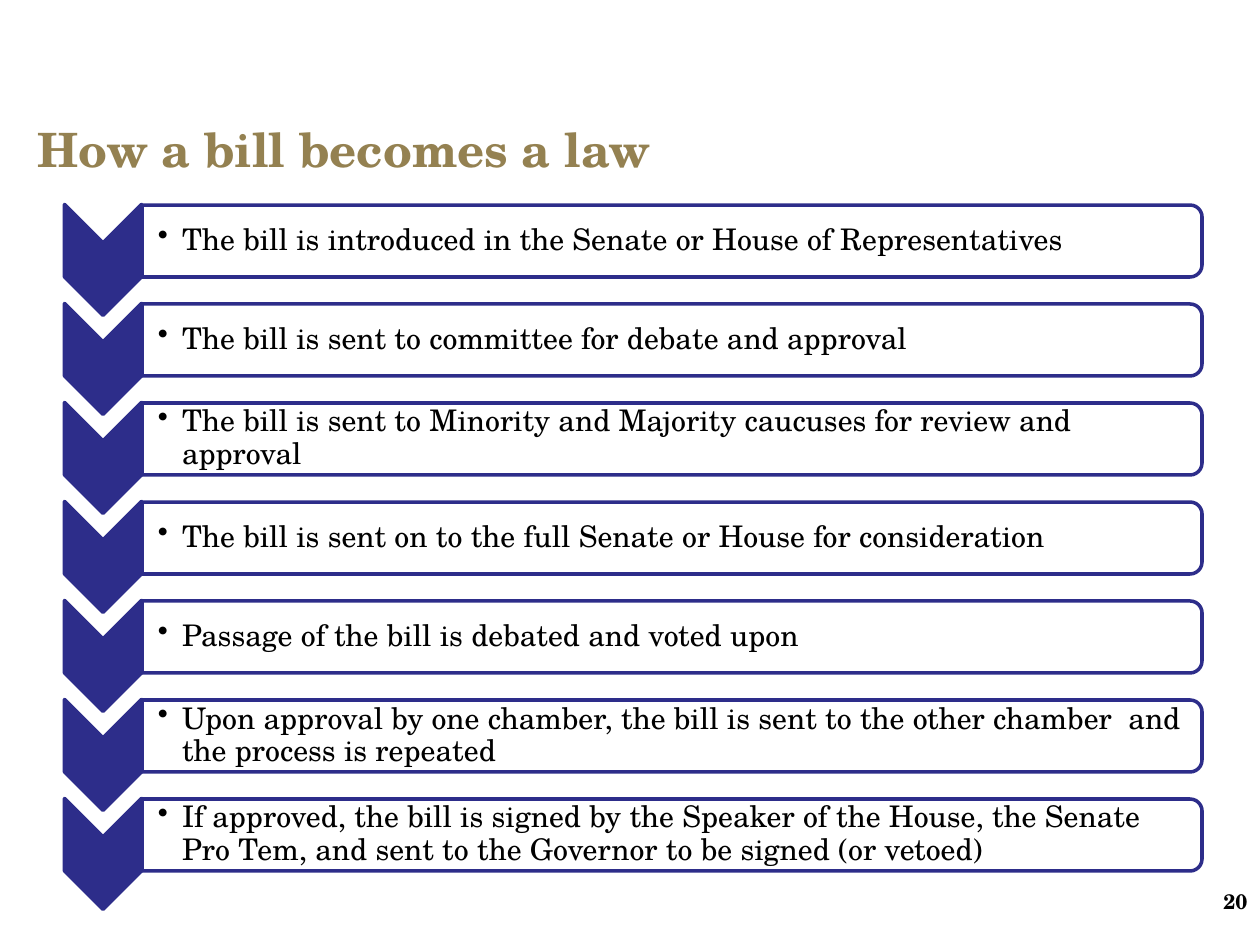
from lxml.etree import SubElement
from pptx import Presentation
from pptx.dml.color import RGBColor
from pptx.enum.shapes import MSO_SHAPE as SHAPE
from pptx.enum.text import MSO_ANCHOR as ANCHOR, MSO_AUTO_SIZE as AUTO, PP_ALIGN as ALIGN
from pptx.oxml.ns import qn
from pptx.util import Pt

PX = 914400 / 126
FONT = "TeX Gyre Schola"
COLORS = {"navy": "2D2D8A", "gold": "948151", "white": "FFFFFF", "black": "000000"}
STEPS = [
    "The bill is introduced in the Senate or House of Representatives",
    "The bill is sent to committee for debate and approval",
    "The bill is sent to Minority and Majority caucuses for review and approval",
    "The bill is sent on to the full Senate or House for consideration",
    "Passage of the bill is debated and voted upon",
    "Upon approval by one chamber, the bill is sent to the other chamber  and the process is repeated",
    "If approved, the bill is signed by the Speaker of the House, the Senate Pro Tem, "
    "and sent to the Governor to be signed (or vetoed)",
]
FIRST_TOP, PITCH = 205, 99
BAR_LEFT, BAR_LENGTH, BAR_HEIGHT = 142, 1060, 72
CHEVRON_LENGTH, CHEVRON_WIDTH = 111, 77


def px(*lengths):
    return [round(n * PX) for n in lengths]


def write(tf, text, color, size, bold=False, align=ALIGN.LEFT):
    tf.word_wrap = True
    tf.auto_size = AUTO.NONE
    p = tf.paragraphs[0]
    p.alignment = align
    r = p.add_run()
    r.text = text
    formats = {"name": FONT, "size": Pt(size), "bold": bold}
    for name, value in formats.items():
        setattr(r.font, name, value)
    r.font.color.rgb = RGBColor.from_string(COLORS[color])
    return p


prs = Presentation()
prs.slide_width, prs.slide_height = px(1260, 945)
s = prs.slides.add_slide(prs.slide_layouts[5])

title = s.shapes.title
title.left, title.top, title.width, title.height = px(25, 108, 1134, 82)
title.text_frame.vertical_anchor = ANCHOR.MIDDLE
write(title.text_frame, "How a bill becomes a law", "gold", 27, bold=True)

number = s.shapes.add_textbox(*px(1074, 882, 186, 38))
write(number.text_frame, "20", "black", 12, bold=True, align=ALIGN.RIGHT)

for i, step in enumerate(STEPS):
    top = FIRST_TOP + i * PITCH
    middle = top + BAR_HEIGHT // 2

    # Both shapes are turned a quarter, so each is placed by its centre
    parts = [
        (SHAPE.CHEVRON, 103, middle + 19, CHEVRON_LENGTH, CHEVRON_WIDTH, "navy"),
        (SHAPE.ROUND_2_SAME_RECTANGLE, BAR_LEFT + BAR_LENGTH / 2, middle,
         BAR_HEIGHT, BAR_LENGTH, "white"),
    ]
    for kind, cx, cy, width, height, color in parts:
        sp = s.shapes.add_shape(kind, *px(cx - width / 2, cy - height / 2, width, height))
        sp.rotation = 90
        sp.shadow.inherit = False
        sp.fill.solid()
        sp.fill.fore_color.rgb = RGBColor.from_string(COLORS[color])
        sp.line.color.rgb = RGBColor.from_string(COLORS["navy"])
        sp.line.width = Pt(2)
    bar_color = sp.fill._xPr.find(qn("a:solidFill"))[0]
    SubElement(bar_color, qn("a:alpha"), val="90000")

    tf = s.shapes.add_textbox(*px(BAR_LEFT, top + 3, BAR_LENGTH - 4, BAR_HEIGHT - 7)).text_frame
    tf.margin_left, tf.margin_top, tf.margin_right, tf.margin_bottom = px(16, 1, 1, 1)
    tf.vertical_anchor = ANCHOR.MIDDLE
    p = write(tf, step, "black", 17)
    p.line_spacing = 0.9
    pPr = p._p.get_or_add_pPr()
    indent = px(24)[0]
    pPr.set("marL", str(indent))
    pPr.set("indent", str(-indent))
    SubElement(pPr, qn("a:buChar"), char="•")

prs.save("out.pptx")
